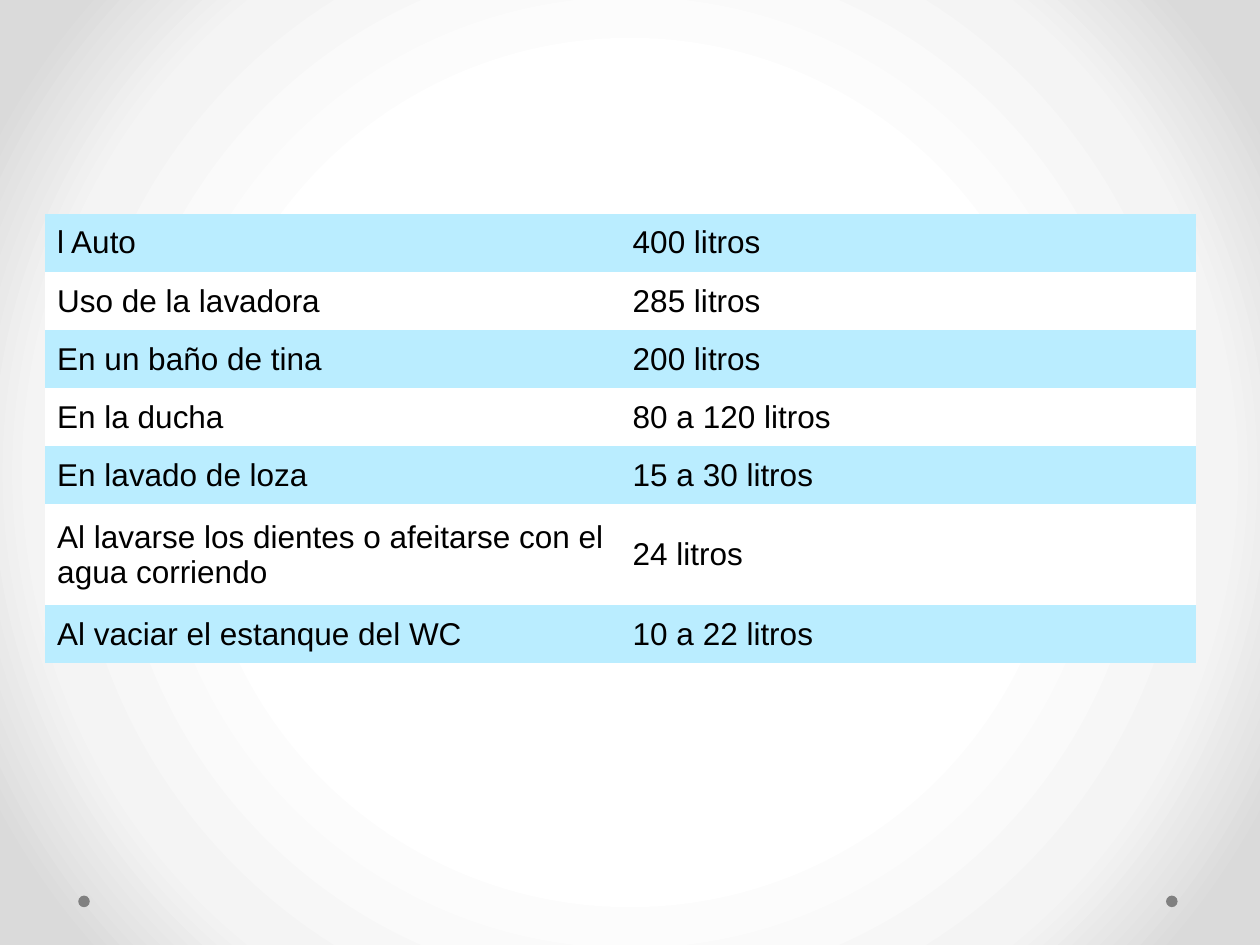
from lxml.etree import SubElement
from pptx import Presentation
from pptx.dml.color import RGBColor
from pptx.enum.shapes import MSO_SHAPE
from pptx.enum.text import MSO_ANCHOR
from pptx.oxml.ns import qn
from pptx.util import Pt

COLOURS = {
    "text": "000000",
    "band": "BAEDFF",
    "plain": "FFFFFF",
    "dot": "808080",
}
BACKGROUND_STOPS = [(50, "FFFFFF"), (76, "F4F4F4"), (92, "DADADA")]
WATER_USE = [
    ("l Auto", "400 litros"),
    ("Uso de la lavadora", "285 litros"),
    ("En un baño de tina", "200 litros"),
    ("En la ducha", "80 a 120 litros"),
    ("En lavado de loza", "15 a 30 litros"),
    ("Al lavarse los dientes o afeitarse con el agua corriendo", "24 litros"),
    ("Al vaciar el estanque del WC", "10 a 22 litros"),
]
ROW_HEIGHT, TALL_ROW_HEIGHT, TALL_ROW = 33.2, 57.6, 5


def colour(name):
    return RGBColor.from_string(COLOURS[name])


def paint_background(page):
    """Radial gradient spreading from the centre of the page."""
    page.background.fill.gradient()
    gradient = page.element.find(".//" + qn("a:gradFill"))
    for child in list(gradient):
        gradient.remove(child)
    stops = SubElement(gradient, qn("a:gsLst"))
    for position, value in BACKGROUND_STOPS:
        stop = SubElement(stops, qn("a:gs"), pos=str(position * 1000))
        SubElement(stop, qn("a:srgbClr"), val=value)
    circle = SubElement(gradient, qn("a:path"), path="circle")
    SubElement(circle, qn("a:fillToRect"), l="50000", t="50000", r="50000", b="50000")


def add_dots(page, left, top, width, size):
    """One dot at each end of the given strip."""
    for x in (left, left + width - size):
        dot = page.shapes.add_shape(MSO_SHAPE.OVAL, Pt(x), Pt(top), Pt(size), Pt(size))
        dot.shadow.inherit = False
        dot.fill.solid()
        dot.fill.fore_color.rgb = colour("dot")
        dot.line.fill.background()


def fill_cell(cell, text, fill):
    cell.fill.solid()
    cell.fill.fore_color.rgb = colour(fill)
    cell.vertical_anchor = MSO_ANCHOR.MIDDLE
    cell.text_frame.text = text
    font = cell.text_frame.paragraphs[0].runs[0].font
    font.name, font.size, font.bold = "Arial", Pt(18), False
    font.color.rgb = colour("text")


def add_water_table(page, left, top, width):
    """Banded table of litres used by each activity."""
    heights = [ROW_HEIGHT] * len(WATER_USE)
    heights[TALL_ROW] = TALL_ROW_HEIGHT
    frame = page.shapes.add_table(
        len(WATER_USE), 2, Pt(left), Pt(top), Pt(width), Pt(sum(heights)))
    table = frame.table
    table.first_row = table.horz_banding = False
    # Borderless table style: "No Style, No Grid"
    style = frame.element.find(".//" + qn("a:tableStyleId"))
    style.text = "{2D5ABB26-0587-4C30-8999-92F81FD0307C}"
    for column in table.columns:
        column.width = Pt(width / 2)
    for index, texts in enumerate(WATER_USE):
        table.rows[index].height = Pt(heights[index])
        fill = "plain" if index % 2 else "band"
        for column, text in enumerate(texts):
            fill_cell(table.cell(index, column), text, fill)


def main():
    deck = Presentation()
    deck.slide_width, deck.slide_height = Pt(720), Pt(540)
    page = deck.slides.add_slide(deck.slide_layouts[6])
    paint_background(page)
    add_dots(page, left=44.7, top=511.8, width=628.2, size=6.6)
    add_water_table(page, left=25.5, top=122.3, width=657.7)
    deck.save("out.pptx")


if __name__ == "__main__":
    main()
